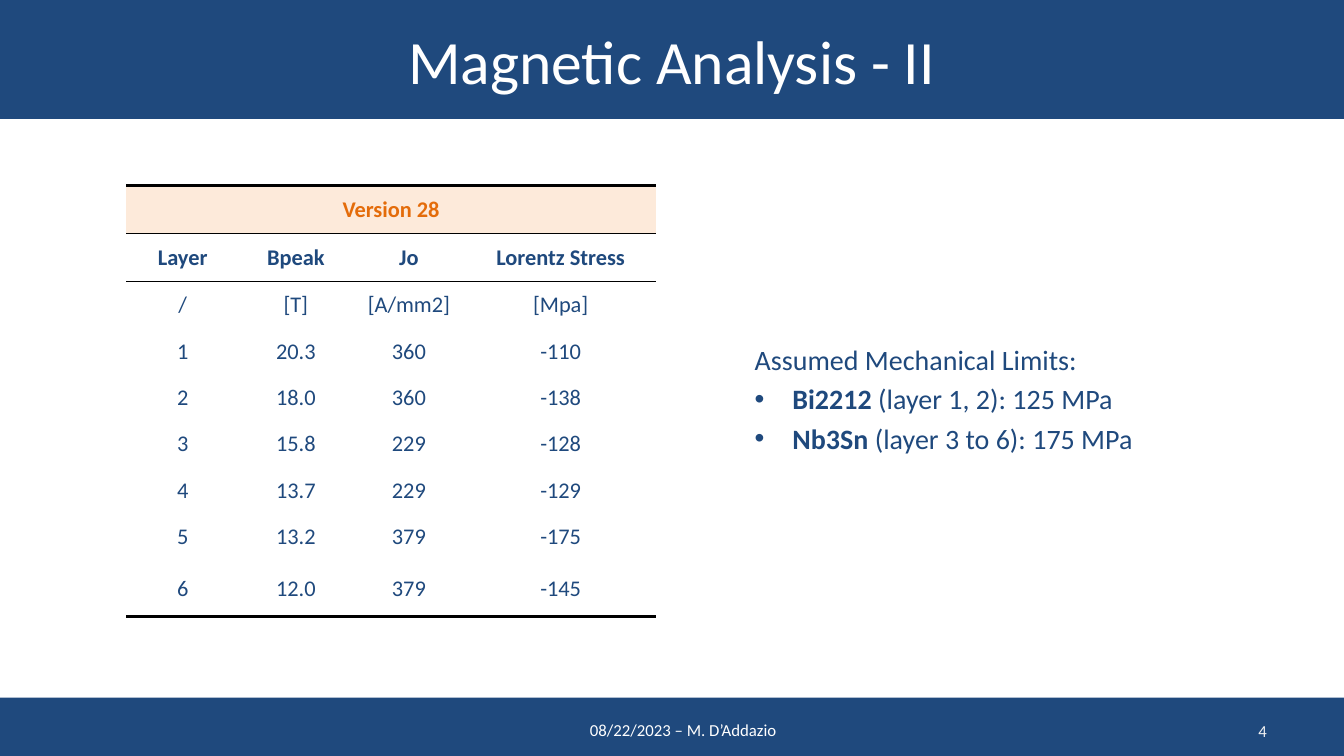
from pptx import Presentation
from pptx.dml.color import RGBColor
from pptx.enum.shapes import MSO_SHAPE
from pptx.enum.text import MSO_ANCHOR, PP_ALIGN
from pptx.oxml import parse_xml
from pptx.oxml.ns import nsdecls
from pptx.util import Cm, Pt

RECT = MSO_SHAPE.RECTANGLE
TOP, MIDDLE = MSO_ANCHOR.TOP, MSO_ANCHOR.MIDDLE
LEFT, CENTER, RIGHT = PP_ALIGN.LEFT, PP_ALIGN.CENTER, PP_ALIGN.RIGHT

TITLE = "Magnetic Analysis - II"
FOOTER = "08/22/2023 – M. D’Addazio"
PAGE = "4"
VERSION = "Version 28"
HEADS = ["Layer", "Bpeak", "Jo", "Lorentz Stress"]
ROWS = [
    ["/", "[T]", "[A/mm2]", "[Mpa]"],
    ["1", "20.3", "360", "-110"],
    ["2", "18.0", "360", "-138"],
    ["3", "15.8", "229", "-128"],
    ["4", "13.7", "229", "-129"],
    ["5", "13.2", "379", "-175"],
    ["6", "12.0", "379", "-145"],
]
LIMITS = "Assumed Mechanical Limits:"
BULLETS = [
    ("Bi2212", " (layer 1, 2): 125 MPa"),
    ("Nb3Sn ", "(layer 3 to 6): 175 MPa"),
]

THEME = {
    "font": "Calibri",
    "navy": "1F497D", "white": "FFFFFF", "pale": "F2F2F2",
    "orange": "E46C0A", "peach": "FDEADA", "rule": "000000",
    "title": 44, "body": 20, "cell": 16, "foot": 12,
}

# Lengths in centimetres
WIDE, HIGH = 33.87, 19.05
HEAD_H, FOOT_Y = 3, 17.58
COLS = [2.85, 2.85, 2.85, 4.8]
HEIGHTS = [1.21] * 2 + [1.17] * 6 + [1.43]
# Line widths in points, by the number of rows above the line
RULES = {0: 2, 1: 1, 2: 1, len(HEIGHTS): 2}


def tint(name):
    return RGBColor.from_string(THEME[name])


def add_run(para, text, size, color, bold=False):
    run = para.add_run()
    run.text = text
    style = {"name": THEME["font"], "size": Pt(THEME[size]), "bold": bold}
    for key, value in style.items():
        setattr(run.font, key, value)
    run.font.color.rgb = tint(color)


def set_frame(frame, anchor=MIDDLE):
    frame.word_wrap = True
    frame.vertical_anchor = anchor
    return frame.paragraphs[0]


def add_bar(slide, top, height):
    bar = slide.shapes.add_shape(RECT, 0, Cm(top), Cm(WIDE), Cm(height))
    bar.shadow.inherit = False
    bar.fill.solid()
    bar.fill.fore_color.rgb = tint("navy")
    bar.line.fill.background()
    return bar


def add_label(slide, box, text, color, align):
    frame = slide.shapes.add_textbox(*map(Cm, box)).text_frame
    para = set_frame(frame)
    para.alignment = align
    add_run(para, text, "foot", color)


def set_edge(cell, side, width):
    """Draw one cell border, or clear it when width is 0."""
    fill = "<a:noFill/>"
    if width:
        fill = f'<a:solidFill><a:srgbClr val="{THEME["rule"]}"/></a:solidFill>'
    props = cell._tc.get_or_add_tcPr()
    props.append(parse_xml(
        f'<a:ln{side} {nsdecls("a")} w="{Pt(width)}">{fill}</a:ln{side}>'))


def fill_cell(cell, row, text):
    edges = {"L": 0, "R": 0, "T": RULES.get(row, 0), "B": RULES.get(row + 1, 0)}
    for side, width in edges.items():
        set_edge(cell, side, width)
    if row == 0:
        cell.fill.solid()
        cell.fill.fore_color.rgb = tint("peach")
    else:
        cell.fill.background()
    form = {"vertical_anchor": MIDDLE, "margin_left": Cm(0.02),
            "margin_right": Cm(0.02), "margin_top": Cm(0.02), "margin_bottom": 0}
    for key, value in form.items():
        setattr(cell, key, value)
    para = cell.text_frame.paragraphs[0]
    para.alignment = CENTER
    if text:
        add_run(para, text, "cell", "navy" if row else "orange", row < 2)


def add_results(slide):
    grid = [[VERSION] + [""] * (len(COLS) - 1), HEADS] + ROWS
    box = (3.18, 4.67, sum(COLS), sum(HEIGHTS))
    table = slide.shapes.add_table(
        len(grid), len(COLS), *map(Cm, box)).table
    table.first_row = table.horz_banding = False
    for col, width in zip(table.columns, COLS):
        col.width = Cm(width)
    for line, height in zip(table.rows, HEIGHTS):
        line.height = Cm(height)
    table.cell(0, 0).merge(table.cell(0, len(COLS) - 1))
    for row, texts in enumerate(grid):
        for col, text in enumerate(texts):
            fill_cell(table.cell(row, col), row, text)


def add_limits(slide):
    box = (18.77, 8.51, 12.34, 3.18)
    frame = slide.shapes.add_textbox(*map(Cm, box)).text_frame
    add_run(set_frame(frame, TOP), LIMITS, "body", "navy")
    for name, rest in BULLETS:
        para = frame.add_paragraph()
        para.space_before = Pt(4)
        props = para._p.get_or_add_pPr()
        props.set("marL", str(Cm(0.95)))
        props.set("indent", str(-Cm(0.95)))
        props.append(parse_xml(
            f'<a:buFont {nsdecls("a")} typeface="Arial"/>'))
        props.append(parse_xml(f'<a:buChar {nsdecls("a")} char="•"/>'))
        add_run(para, name, "body", "navy", True)
        add_run(para, rest, "body", "navy")


def main():
    deck = Presentation()
    deck.slide_width, deck.slide_height = Cm(WIDE), Cm(HIGH)
    slide = deck.slides.add_slide(deck.slide_layouts[6])
    add_bar(slide, FOOT_Y, HIGH - FOOT_Y)
    add_label(slide, (24.28, 17.91, 7.9, 1.02), PAGE, "pale", RIGHT)
    para = set_frame(add_bar(slide, 0, HEAD_H).text_frame)
    para.alignment = CENTER
    add_run(para, TITLE, "title", "white")
    add_results(slide)
    add_limits(slide)
    add_label(slide, (14.35, 17.88, 5.74, 1.04), FOOTER, "white", CENTER)
    deck.save("out.pptx")


if __name__ == "__main__":
    main()
